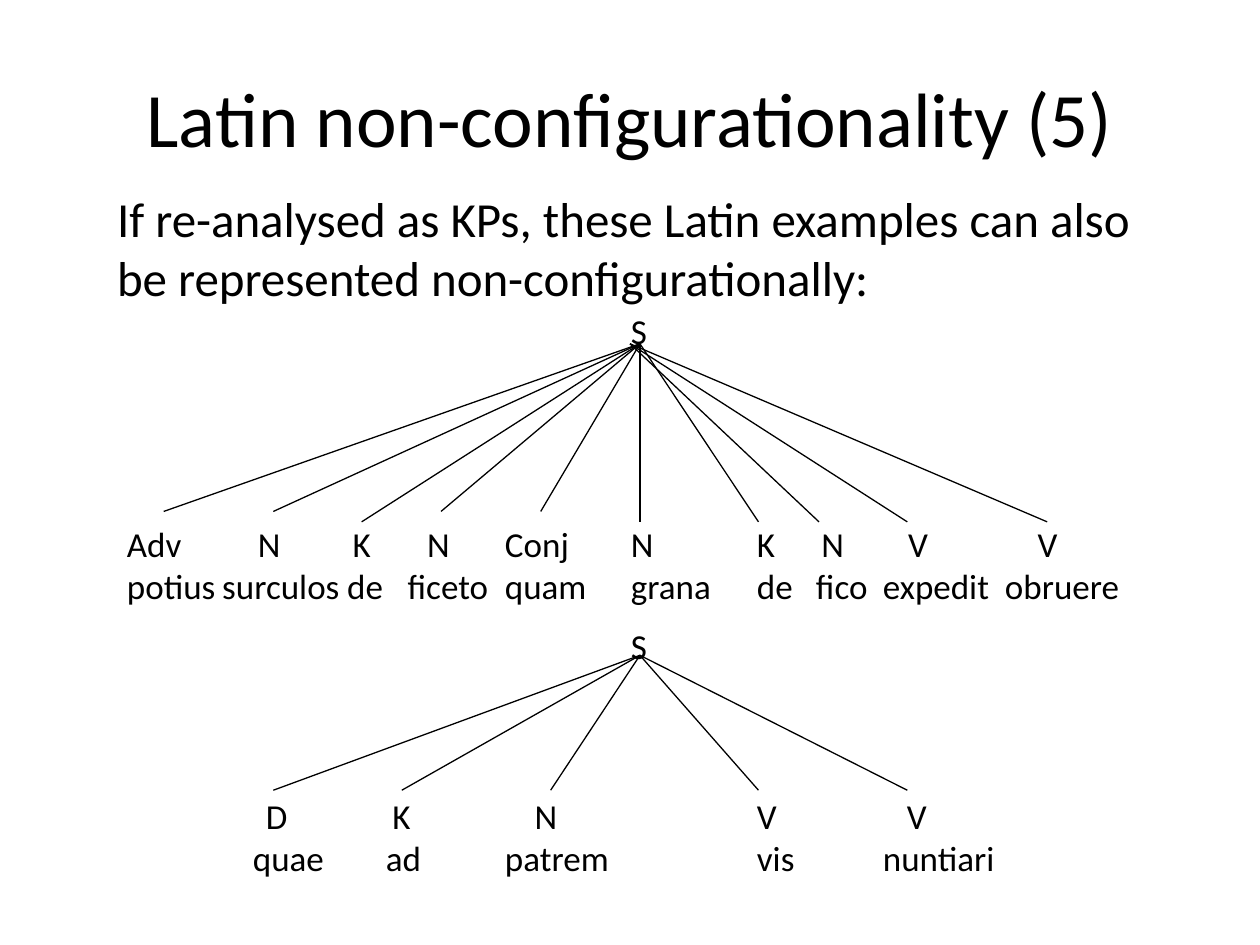
from lxml import etree
from pptx import Presentation
from pptx import util as u
from pptx.dml.color import RGBColor
from pptx.enum import shapes, text
from pptx.oxml import ns

COLORS = {"ink": "000000", "paper": "FFFFFF"}
FONT = "Calibri"
ROW_PT = 24.4  # height of one 20 pt line
ROOT_TAB = 10.16
ROOT_X, ROOT_X_RIGHT = 12.9, 12.7
HIGH, LOW = 10.31, 10.52  # ends of the first tree's branches

# Each label is (position in its row, text), in cm from the text edge.
FIRST_TAGS = [(0, "Adv"), (2.64, "N"), (4.55, "K"), (6.05, "N"), (7.62, "Conj"),
              (10.16, "N"), (12.7, "K"), (14, "N"), (15.75, "V"), (18.36, "V")]
FIRST_WORDS = [(0, "potius"), (1.92, "surculos"), (4.44, "de"), (5.66, "ficeto"),
               (7.62, "quam"), (10.16, "grana"), (12.7, "de"), (13.89, "fico"),
               (15.24, "expedit"), (17.7, "obruere")]
SECOND_TAGS = [(2.8, "D"), (5.35, "K"), (8.22, "N"), (12.7, "V"), (15.72, "V")]
SECOND_WORDS = [(2.54, "quae"), (5.22, "ad"), (7.62, "patrem"), (12.7, "vis"),
                (15.24, "nuntiari")]

# Each branch is (root x, end x, end y).
FIRST_BRANCHES = [(ROOT_X, 3.3, HIGH), (ROOT_X, 5.51, HIGH), (ROOT_X, 7.29, LOW),
                  (ROOT_X, 8.89, HIGH), (ROOT_X, 10.9, HIGH), (ROOT_X, 12.9, LOW),
                  (ROOT_X, 15.29, LOW), (ROOT_X_RIGHT, 16.51, LOW),
                  (ROOT_X_RIGHT, 18.29, LOW), (ROOT_X_RIGHT, 21.11, LOW)]
SECOND_BRANCHES = [(ROOT_X, x, 15.93) for x in (5.51, 8.1, 11.1, 15.29, 18.29)]


def color(name):
    return RGBColor.from_string(COLORS[name])


def add_text(page, left, top, width, height, lines, size):
    box = page.shapes.add_textbox(u.Cm(left), u.Cm(top), u.Cm(width), u.Cm(height))
    frame = box.text_frame
    frame.word_wrap = True
    frame.text = "\n".join(lines)
    for para in frame.paragraphs:
        for span in para.runs:
            span.font.name = FONT
            span.font.size = u.Pt(size)
            span.font.color.rgb = color("ink")
    return frame


def tabbed(labels):
    """Join labels with tabs; a row that starts at the edge needs no first tab."""
    row = "\t".join(label for _, label in labels)
    return row if labels[0][0] == 0 else "\t" + row


def set_tabs(para, labels):
    props = para._p.get_or_add_pPr()
    stops = etree.SubElement(props, ns.qn("a:tabLst"))
    for position, _ in labels:
        if position:
            etree.SubElement(stops, ns.qn("a:tab"), pos=str(u.Cm(position)), algn="l")


def add_branch(page, start_x, start_y, end_x, end_y):
    line = page.shapes.add_connector(
        shapes.MSO_CONNECTOR.STRAIGHT,
        u.Cm(start_x), u.Cm(start_y), u.Cm(end_x), u.Cm(end_y))
    line.line.color.rgb = color("ink")
    line.line.width = u.Pt(0.75)
    etree.SubElement(line._element.spPr, ns.qn("a:effectLst"))


def add_tree(page, top, height, gap_rows, tags, words, root_y, branches):
    """Add a root S, its tag and word rows, and the branches between them."""
    rows = [[(ROOT_TAB, "S")], tags, words]
    frame = add_text(page, 2.31, top, 21.21, height, map(tabbed, rows), 20)
    frame.paragraphs[1].space_before = u.Pt(gap_rows * ROW_PT)
    for para, labels in zip(frame.paragraphs, rows):
        set_tabs(para, labels)
    for root_x, end_x, end_y in branches:
        add_branch(page, root_x, root_y, end_x, end_y)


def main():
    deck = Presentation()
    deck.slide_width, deck.slide_height = u.Cm(25.4), u.Cm(19.05)
    page = deck.slides.add_slide(deck.slide_layouts[6])
    page.background.fill.solid()
    page.background.fill.fore_color.rgb = color("paper")

    title = add_text(page, 1.27, 0.76, 22.86, 3.18,
                     ["Latin non-configurationality (5)"], 44)
    title.vertical_anchor = text.MSO_ANCHOR.MIDDLE
    title.paragraphs[0].alignment = text.PP_ALIGN.CENTER
    add_text(page, 2.11, 3.68, 21.21, 2.64,
             ["If re-analysed as KPs, these Latin examples can also "
              "be represented non-configurationally:"], 28)

    add_tree(page, 6.12, 7.09, 4, FIRST_TAGS, FIRST_WORDS, 6.93, FIRST_BRANCHES)
    add_tree(page, 12.47, 6.25, 3, SECOND_TAGS, SECOND_WORDS, 13.21, SECOND_BRANCHES)
    deck.save("out.pptx")


if __name__ == "__main__":
    main()
